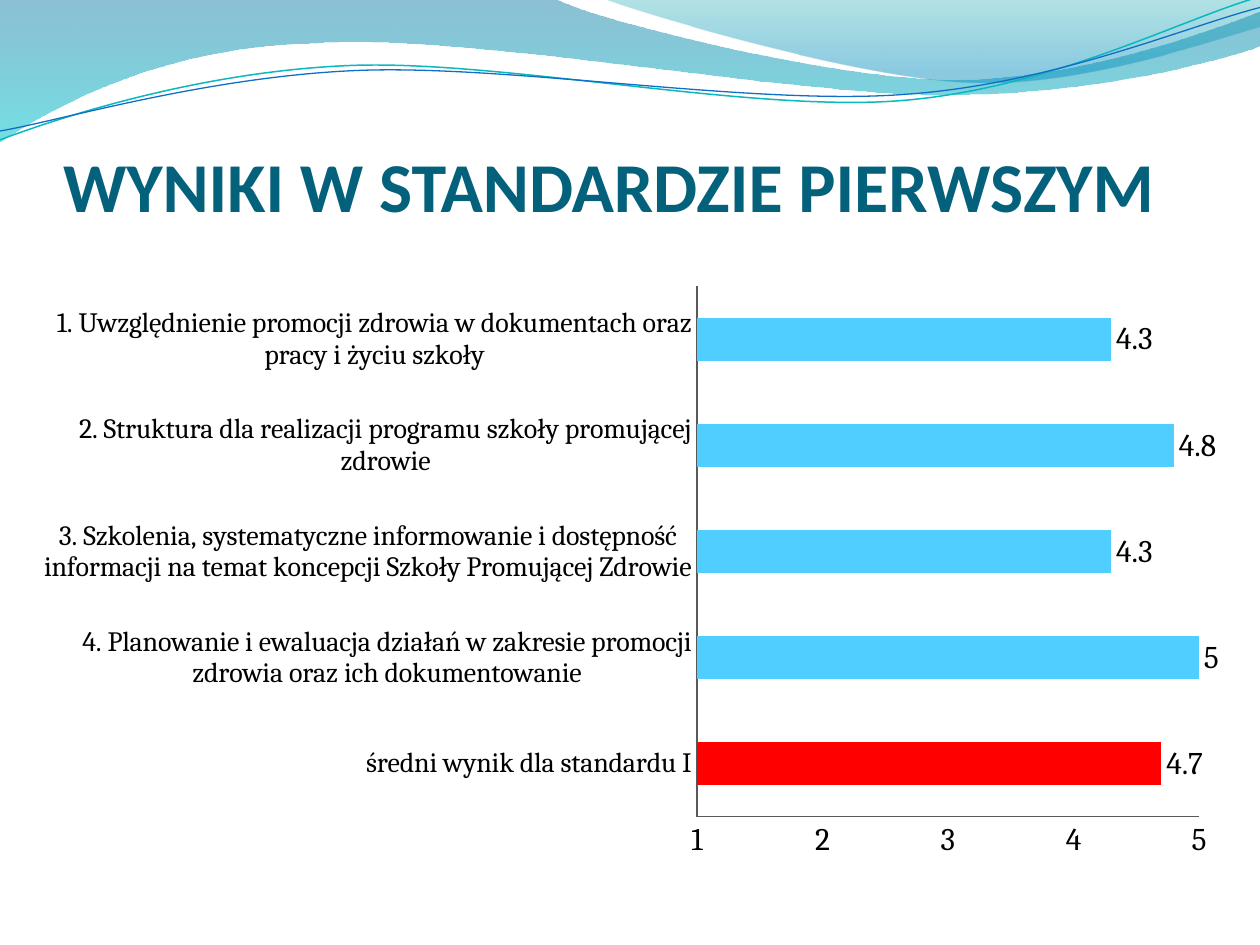
"""Build the slide with the results of the first standard."""
import math
from dataclasses import dataclass

from lxml import etree
from pptx import Presentation
from pptx import util as u
from pptx.chart.data import CategoryChartData
from pptx.dml.color import RGBColor
from pptx.enum import chart as ch
from pptx.enum import text
from pptx.oxml.ns import qn


@dataclass(frozen=True)
class Theme:
    """Colours, fonts and type sizes."""
    heading: str = "04617B"
    ink: str = "000000"
    axis: str = "595959"
    bar: str = "4FCEFF"
    mean: str = "FF0000"
    series: str = "0F6FC6"
    teal_line: str = "0AB8BF"
    blue_line: str = "0F6FC6"
    left_wave: tuple = ((0, "0074A1", 45), (1, "00C6CF", 55))
    right_wave: tuple = ((0, "00A1A9", 30), (0.8, "008BBF", 45))
    heading_font: str = "Calibri"
    body_font: str = "Cambria"
    heading_size: int = 40
    value_size: int = 18
    category_size: int = 16


def rgb(code):
    """Return a colour object for a hex code."""
    return RGBColor.from_string(code)


def turn(point, pivot, degrees):
    """Rotate a point clockwise around a pivot."""
    angle = math.radians(degrees)
    x, y = point[0] - pivot[0], point[1] - pivot[1]
    return (pivot[0] + x * math.cos(angle) - y * math.sin(angle),
            pivot[1] + x * math.sin(angle) + y * math.cos(angle))


class SlideBuilder:
    """Hold the theme and the current slide."""

    def __init__(self, theme, slide):
        """Keep the theme and the slide."""
        self.theme = theme
        self.slide = slide

    def outline(self, start, segments, close):
        """Draw lines (one point) and Bézier curves (three points) in units of 2.54 cm."""
        knots = [start] + [knot for segment in segments for knot in segment]
        first, *rest = [(u.Cm(2.54 * x), u.Cm(2.54 * y)) for x, y in knots]
        builder = self.slide.shapes.build_freeform(*first)
        builder.add_line_segments(rest, close=close)
        shape = builder.convert_to_shape()
        shape.shadow.inherit = False
        lines = iter(list(shape._element.iter(qn("a:lnTo"))))
        for segment in segments:
            parts = [next(lines) for _ in segment]
            if len(parts) == 3:
                bend = etree.Element(qn("a:cubicBezTo"))
                parts[0].addprevious(bend)
                for part in parts:
                    bend.append(part[0])
                    part.getparent().remove(part)
        return shape

    def wave(self, start, segments, stops):
        """Draw a translucent wave with a vertical gradient."""
        shape = self.outline(start, segments, True)
        shape.line.fill.background()
        shape.fill.gradient()
        shape.fill.gradient_angle = 270
        for stop, (position, color, _) in zip(shape.fill.gradient_stops, stops):
            stop.position = position
            stop.color.rgb = rgb(color)
        for color, (_, _, opacity) in zip(shape._element.iter(qn("a:srgbClr")), stops):
            etree.SubElement(color, qn("a:alpha"), val=str(opacity * 1000))

    def ribbon(self, start, segments, pivot, color, width, tilt=2.7):
        """Draw a thin curve as a shape tilted around its pivot."""
        level = [[turn(knot, pivot, tilt) for knot in segment] for segment in segments]
        shape = self.outline(turn(start, pivot, tilt), level, False)
        shape.rotation = 360 - tilt
        shape.fill.background()
        shape.line.color.rgb = rgb(color)
        shape.line.width = u.Pt(width)

    def title(self, words):
        """Place and format the title above the waves."""
        title = self.slide.shapes.title
        title.left, title.top = u.Cm(1.27), u.Cm(1.95)
        title.width, title.height = u.Cm(22.86), u.Cm(2.61)
        frame = title.text_frame
        frame.text = words
        frame.word_wrap = True
        frame.auto_size = text.MSO_AUTO_SIZE.NONE
        frame.vertical_anchor = text.MSO_ANCHOR.BOTTOM
        frame.margin_left = frame.margin_right = frame.margin_bottom = 0
        heading = frame.paragraphs[0]
        heading.alignment = text.PP_ALIGN.LEFT
        self.font(heading.font, self.theme.heading_font, self.theme.heading_size,
                  self.theme.heading)
        heading.font.bold = True
        self.slide.shapes._spTree.append(title._element)

    def font(self, font, name, size, color):
        """Apply name, size and colour to a font."""
        font.name, font.size = name, u.Pt(size)
        font.color.rgb = rgb(color)

    def axis(self, axis, size):
        """Apply the common axis style."""
        axis.has_major_gridlines = False
        axis.major_tick_mark = axis.minor_tick_mark = ch.XL_TICK_MARK.NONE
        axis.format.line.color.rgb = rgb(self.theme.axis)
        axis.format.line.width = u.Pt(0.75)
        self.font(axis.tick_labels.font, self.theme.body_font, size, self.theme.ink)

    def bars(self, scores):
        """Add the bar chart, with the mean as its first bar."""
        theme = self.theme
        data = CategoryChartData()
        data.categories = [name for name, _ in scores]
        data.add_series("Series 1", [score for _, score in scores])
        chart = self.slide.shapes.add_chart(
            ch.XL_CHART_TYPE.BAR_CLUSTERED, u.Cm(0.41), u.Cm(5.56),
            u.Cm(24.41), u.Cm(11.99), data).chart
        chart.has_legend = chart.has_title = False
        self.font(chart.font, theme.body_font, theme.value_size, theme.ink)
        self.axis(chart.category_axis, theme.category_size)
        self.axis(chart.value_axis, theme.value_size)
        scale = chart.value_axis
        scale.minimum_scale, scale.maximum_scale, scale.major_unit = 1, 5, 1
        plot = chart.plots[0]
        plot.gap_width, plot.overlap, plot.vary_by_categories = 150, -25, False
        series = plot.series[0]
        labels = series.data_labels
        labels.show_value = True
        labels.position = ch.XL_LABEL_POSITION.OUTSIDE_END
        self.font(labels.font, theme.body_font, theme.value_size, theme.ink)
        series.format.fill.solid()
        series.format.fill.fore_color.rgb = rgb(theme.series)
        for i in range(len(scores)):
            fill = series.points[i].format.fill
            fill.solid()
            fill.fore_color.rgb = rgb(theme.bar if i else theme.mean)
        self.plot_area(chart, x=55.88, y=1.8, w=41.47, h=89.15)

    def plot_area(self, chart, **percent):
        """Fix the inner plot area in percent of the chart."""
        area = chart._chartSpace.find(".//" + qn("c:plotArea"))
        for old in area.findall(qn("c:layout")):
            area.remove(old)
        layout = etree.Element(qn("c:layout"))
        area.insert(0, layout)
        manual = etree.SubElement(layout, qn("c:manualLayout"))
        settings = {"layoutTarget": "inner", "xMode": "edge", "yMode": "edge"}
        settings.update({side: share / 100 for side, share in percent.items()})
        for name, value in settings.items():
            etree.SubElement(manual, qn("c:" + name), val=str(value))


def main():
    """Build and save the slide."""
    deck = Presentation()
    deck.slide_width, deck.slide_height = u.Cm(25.4), u.Cm(19.05)
    theme = Theme()
    page = SlideBuilder(theme, deck.slides.add_slide(deck.slide_layouts[5]))
    page.wave((0, 0), [
        [(4.4, -0.01)],
        [(4.76, 0.17), (6.64, 0.63), (7.58, 0.63)],
        [(8.53, 0.63), (9.58, 0.26), (10, 0.09)],
        [(10.01, 0.36)],
        [(9.83, 0.44), (8.7, 0.76), (7.46, 0.75)],
        [(6.22, 0.75), (3.82, 0.28), (2.57, 0.34)],
        [(1.29, 0.36), (0.46, 0.83), (-0.01, 1.13)],
        [(0, 0)]], theme.left_wave)
    page.wave((4.79, -0.01), [
        [(5.09, 0.11), (6.82, 0.62), (7.69, 0.65)],
        [(8.56, 0.69), (9.61, 0.32), (10, 0.21)],
        [(10, 0)],
        [(4.79, -0.01)]], theme.right_wave)
    page.ribbon((0, 1.11), [
        [(0.48, 0.93), (1.58, 0.57), (2.77, 0.52)],
        [(3.95, 0.47), (5.93, 0.89), (7.13, 0.8)],
        [(8.33, 0.71), (9.38, 0.15), (9.98, -0.02)]],
        (4.99, 0.57), theme.teal_line, 0.85)
    page.ribbon((0, 1.04), [
        [(0.47, 0.96), (1.64, 0.61), (2.83, 0.56)],
        [(4.03, 0.51), (5.97, 0.84), (7.17, 0.75)],
        [(8.36, 0.67), (9.41, 0.21), (10, 0.06)]],
        (5, 0.59), theme.blue_line, 0.75)
    page.title("WYNIKI W STANDARDZIE PIERWSZYM")
    page.bars([
        ("średni wynik dla standardu I", 4.7),
        ("4. Planowanie i ewaluacja działań w zakresie promocji zdrowia oraz ich dokumentowanie", 5),
        ("3. Szkolenia, systematyczne informowanie i dostępność informacji na temat koncepcji "
         "Szkoły Promującej Zdrowie", 4.3),
        ("2. Struktura dla realizacji programu szkoły promującej zdrowie", 4.8),
        ("1. Uwzględnienie promocji zdrowia w dokumentach oraz pracy i życiu szkoły", 4.3),
    ])
    deck.save("out.pptx")


if __name__ == "__main__":
    main()
